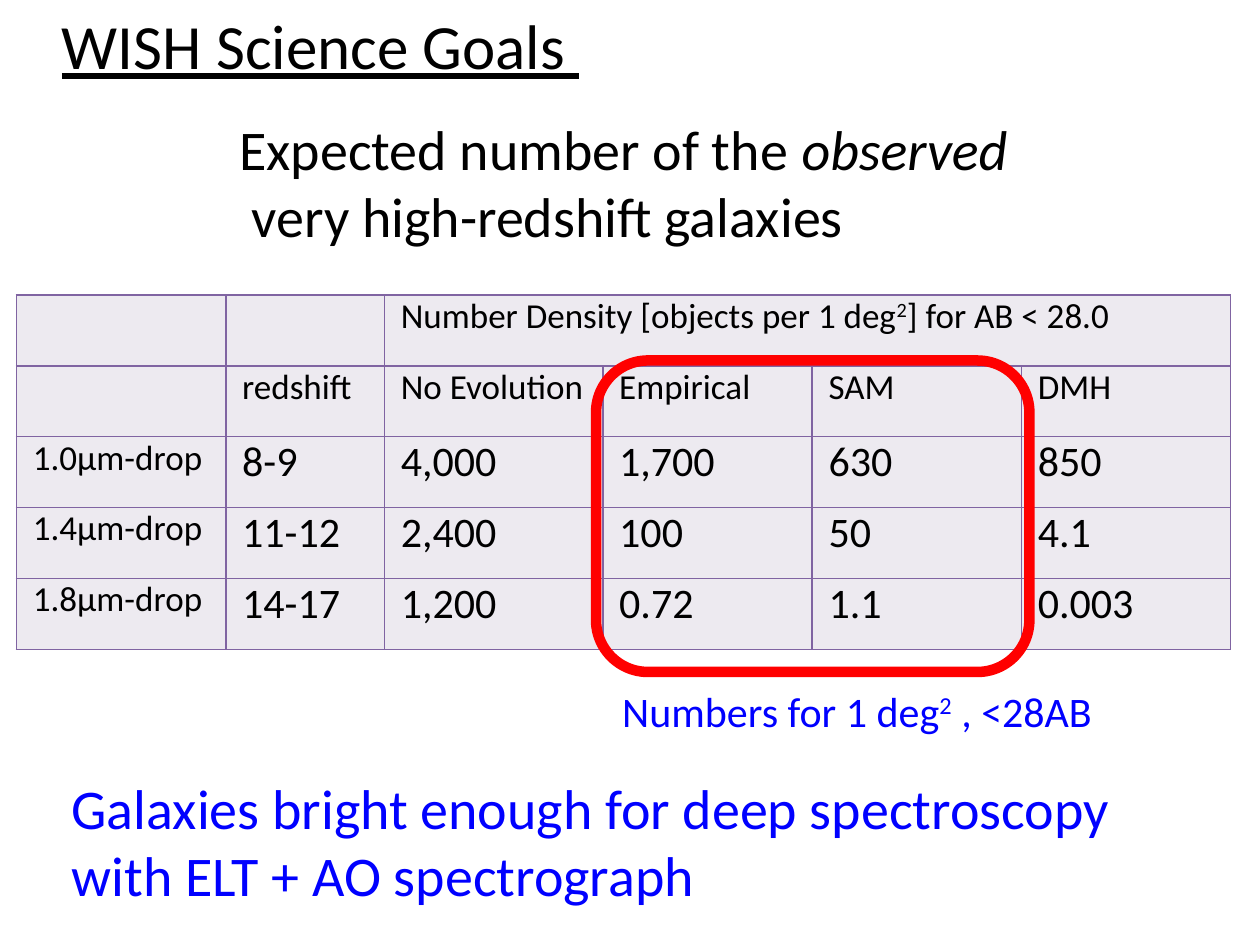
from dataclasses import dataclass

from lxml.etree import SubElement
from pptx import Presentation
from pptx.dml.color import RGBColor as Color
from pptx.enum.shapes import MSO_SHAPE as Shape
from pptx.enum.text import MSO_ANCHOR as Anchor, MSO_AUTO_SIZE as AutoSize, PP_ALIGN as Align
from pptx.oxml.ns import qn
from pptx.util import Pt


@dataclass(frozen=True)
class Theme:
    font: str = "Calibri"
    ink: str = "000000"
    note: str = "0000FF"
    highlight: str = "FF0000"
    cell: str = "EDEAF0"
    grid: str = "8064A2"
    title: int = 36
    statement: int = 32
    figure: int = 24
    label: int = 20


THEME = Theme()
COLUMNS = [119.6, 90.7, 124.8, 119.6, 119.6, 119.6]
DENSITIES = [
    ["", "", [("Number Density [objects per 1 deg", {}), ("2", {"baseline": 30000}),
              ("] for AB < 28.0", {})], "", "", ""],
    ["", "redshift", "No Evolution", "Empirical", "SAM", "DMH"],
    ["1.0μm-drop", "8-9", "4,000", "1,700", "630", "850"],
    ["1.4μm-drop", "11-12", "2,400", "100", "50", "4.1"],
    ["1.8μm-drop", "14-17", "1,200", "0.72", "1.1", "0.003"],
]


def apply(target, values):
    for name, value in values.items():
        setattr(target, name, value)


def write(frame, paragraphs, size, color):
    for index, parts in enumerate(paragraphs):
        paragraph = frame.paragraphs[0] if index == 0 else frame.add_paragraph()
        paragraph.alignment = Align.LEFT
        for text, extra in [(parts, {})] if isinstance(parts, str) else parts:
            run = paragraph.add_run()
            run.text = text
            formats = {"name": THEME.font, "size": Pt(size)} | extra
            baseline = formats.pop("baseline", None)
            apply(run.font, formats)
            run.font.color.rgb = Color.from_string(color)
            if baseline:
                run.font._element.set("baseline", str(baseline))


def place(shape, box):
    apply(shape, dict(zip(("left", "top", "width", "height"), map(Pt, box))))


def add_title(slide, box):
    title = slide.shapes.title
    place(title, box)
    apply(title.text_frame, {"vertical_anchor": Anchor.TOP, "word_wrap": True,
                             "auto_size": AutoSize.NONE})
    write(title.text_frame, [[("WISH Science Goals ", {"underline": True})]],
          THEME.title, THEME.ink)


def add_statement(slide, box, paragraphs, size, color, wrap):
    frame = slide.shapes.add_textbox(*map(Pt, box)).text_frame
    apply(frame, {"word_wrap": wrap, "auto_size": AutoSize.SHAPE_TO_FIT_TEXT})
    write(frame, paragraphs, size, color)


def style_cell(cell):
    apply(cell, {"margin_left": Pt(9.4), "margin_right": Pt(9.4),
                 "margin_top": 0, "margin_bottom": 0})
    properties = cell._tc.get_or_add_tcPr()
    for side in ("lnL", "lnR", "lnT", "lnB"):
        border = SubElement(properties, qn(f"a:{side}"), w=str(Pt(1)))
        fill = SubElement(border, qn("a:solidFill"))
        SubElement(fill, qn("a:srgbClr"), val=THEME.grid)
    cell.fill.solid()
    cell.fill.fore_color.rgb = Color.from_string(THEME.cell)


def add_densities(slide, box):
    table = slide.shapes.add_table(len(DENSITIES), len(COLUMNS), *map(Pt, box)).table
    for column, width in zip(table.columns, COLUMNS):
        column.width = Pt(width)
    for row in table.rows:
        row.height = Pt(box[3] / len(DENSITIES))
    table.cell(0, 2).merge(table.cell(0, 5))
    for row, entries in enumerate(DENSITIES):
        for column, entry in enumerate(entries):
            cell = table.cell(row, column)
            style_cell(cell)
            if entry:
                size = THEME.figure if row > 1 and column > 0 else THEME.label
                write(cell.text_frame, [entry], size, THEME.ink)
                apply(cell.text_frame.paragraphs[0],
                      {"alignment": Align.JUSTIFY, "space_after": Pt(6)})


def add_highlight(slide, box):
    outline = slide.shapes.add_shape(Shape.ROUNDED_RECTANGLE, *map(Pt, box))
    outline.shadow.inherit = False
    outline.fill.background()
    outline.line.color.rgb = Color.from_string(THEME.highlight)
    outline.line.width = Pt(6)


def main():
    deck = Presentation()
    apply(deck, {"slide_width": Pt(720), "slide_height": Pt(540)})
    slide = deck.slides.add_slide(deck.slide_layouts[5])
    add_densities(slide, (9.4, 168.6, sum(COLUMNS), 202.5))
    add_title(slide, (28.2, 0, 506, 51))
    add_statement(slide, (129.6, 62, 464.4, 85),
                  [[("Expected number of the ", {}), ("observed", {"italic": True})],
                   " very high-redshift galaxies"],
                  THEME.statement, THEME.ink, False)
    add_highlight(slide, (340.6, 206, 247.6, 178))
    add_statement(slide, (348.5, 388, 288, 36),
                  [[("Numbers for 1 deg", {}), ("2", {"baseline": 30000}), (" , <28AB", {})]],
                  THEME.figure, THEME.note, False)
    add_statement(slide, (33.8, 438.5, 669.6, 85),
                  ["Galaxies bright enough for deep spectroscopy", "with ELT + AO spectrograph"],
                  THEME.statement, THEME.note, True)
    deck.save("out.pptx")


if __name__ == "__main__":
    main()
